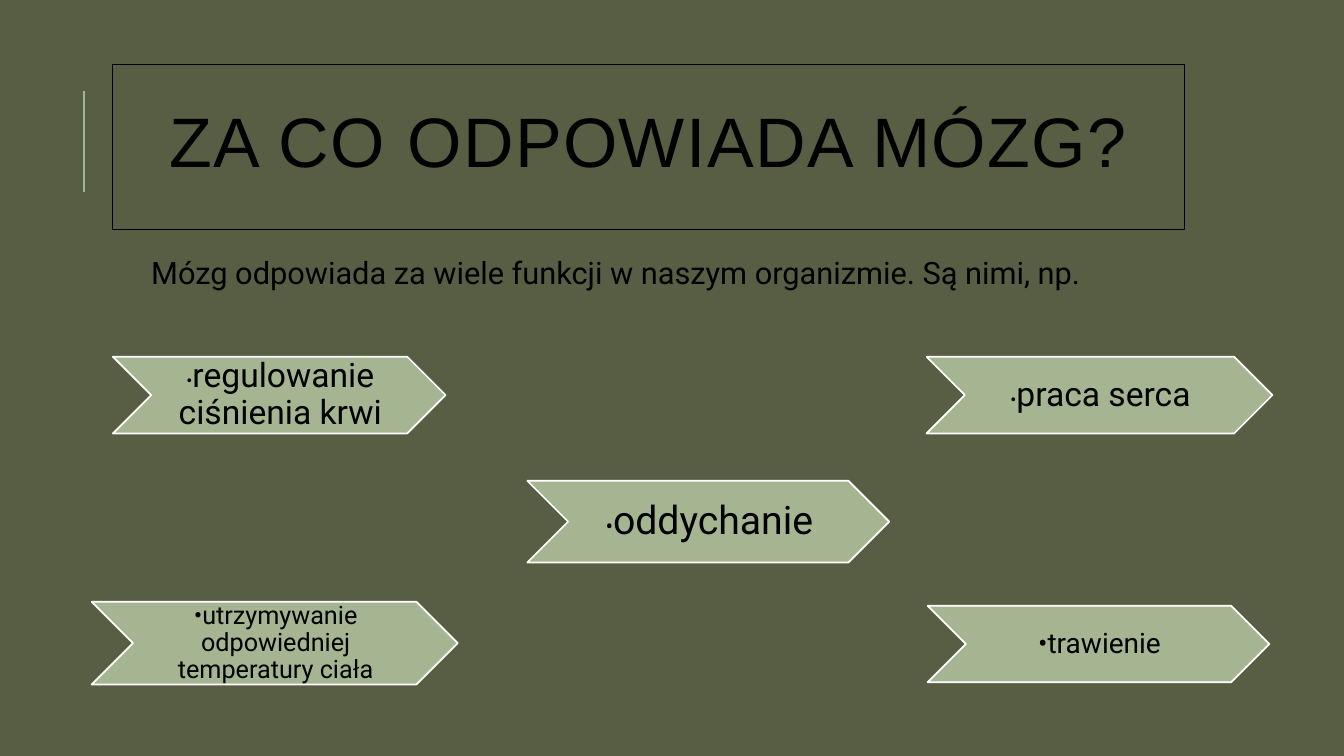
from dataclasses import dataclass

from lxml.etree import SubElement
from pptx import Presentation
from pptx.dml.color import RGBColor
from pptx.enum.shapes import MSO_CONNECTOR, MSO_SHAPE
from pptx.enum.text import MSO_ANCHOR, MSO_AUTO_SIZE, PP_ALIGN
from pptx.oxml.ns import qn
from pptx.slide import Slide
from pptx.text.text import _Run
from pptx.util import Emu, Pt

EMU_PER_PX = 9144  # 100 px to the inch
COLORS = {"background": "575E44", "sage": "A5B592", "text": "000000", "outline": "FFFFFF"}
BODY_FONT = "Roboto"
TITLE_FONT = "Arial"


@dataclass(frozen=True)
class FunctionArrow:
    text: str
    left: int
    top: int
    width: int
    height: int
    text_size: int
    bullet_size: int


ARROWS = [
    FunctionArrow("oddychanie", 523, 477, 359, 81, 28, 16),
    FunctionArrow("praca serca", 919, 354, 343, 76, 24, 13),
    FunctionArrow("regulowanie ciśnienia krwi", 112, 354, 330, 76, 24, 13),
    FunctionArrow("trawienie", 920, 601, 339, 76, 20, 20),
    FunctionArrow("utrzymywanie odpowiedniej temperatury ciała", 91, 597, 363, 82, 18, 18),
]


def px(length: int) -> Emu:
    return Emu(length * EMU_PER_PX)


def color(name: str) -> RGBColor:
    return RGBColor.from_string(COLORS[name])


def format_run(run: _Run, size: int, font_name: str = BODY_FONT) -> None:
    run.font.size = Pt(size)
    run.font.name = font_name
    run.font.color.rgb = color("text")


def add_accent_line(slide: Slide) -> None:
    line = slide.shapes.add_connector(MSO_CONNECTOR.STRAIGHT, px(83), px(190), px(83), px(90))
    line.line.color.rgb = color("sage")
    line.line.width = Pt(1.5)
    SubElement(line._element.spPr, qn("a:effectLst"))


def format_title(slide: Slide) -> None:
    title = slide.shapes.title
    title.left, title.top, title.width, title.height = px(112), px(64), px(1063), px(164)
    title.line.color.rgb = color("text")
    title.line.width = Pt(0.75)
    frame = title.text_frame
    frame.text = "ZA CO ODPOWIADA MÓZG?"
    frame.word_wrap = True
    frame.auto_size = MSO_AUTO_SIZE.NONE
    frame.vertical_anchor = MSO_ANCHOR.MIDDLE
    paragraph = frame.paragraphs[0]
    paragraph.alignment = PP_ALIGN.CENTER
    paragraph.line_spacing = 0.8
    run = paragraph.runs[0]
    format_run(run, 50, TITLE_FONT)
    run.font._element.set("spc", "100")


def add_introduction(slide: Slide) -> None:
    box = slide.shapes.add_textbox(px(130), px(251), px(1045), px(43))
    frame = box.text_frame
    frame.text = "Mózg odpowiada za wiele funkcji w naszym organizmie. Są nimi, np."
    frame.word_wrap = True
    frame.margin_left = px(20)
    paragraph = frame.paragraphs[0]
    paragraph.line_spacing = 0.9
    format_run(paragraph.runs[0], 22)


def add_function_arrow(slide: Slide, arrow: FunctionArrow) -> None:
    shape = slide.shapes.add_shape(
        MSO_SHAPE.CHEVRON, px(arrow.left), px(arrow.top), px(arrow.width), px(arrow.height)
    )
    shape.shadow.inherit = False
    shape.fill.solid()
    shape.fill.fore_color.rgb = color("sage")
    shape.line.color.rgb = color("outline")
    shape.line.width = Pt(1.25)

    frame = shape.text_frame
    frame.word_wrap = True
    frame.vertical_anchor = MSO_ANCHOR.MIDDLE
    frame.margin_left, frame.margin_right = px(2), px(0)
    frame.margin_top = frame.margin_bottom = px(1)
    paragraph = frame.paragraphs[0]
    paragraph.alignment = PP_ALIGN.CENTER
    paragraph.line_spacing = 0.9
    for text, size in (("•", arrow.bullet_size), (arrow.text, arrow.text_size)):
        run = paragraph.add_run()
        run.text = text
        format_run(run, size)


def main() -> None:
    presentation = Presentation()
    presentation.slide_width, presentation.slide_height = px(1333), px(750)
    title_only = presentation.slide_layouts.get_by_name("Title Only")
    slide = presentation.slides.add_slide(title_only)
    slide.background.fill.solid()
    slide.background.fill.fore_color.rgb = color("background")

    # Heading
    add_accent_line(slide)
    format_title(slide)

    # Brain functions
    for arrow in ARROWS:
        add_function_arrow(slide, arrow)
    add_introduction(slide)

    presentation.save("out.pptx")


if __name__ == "__main__":
    main()
